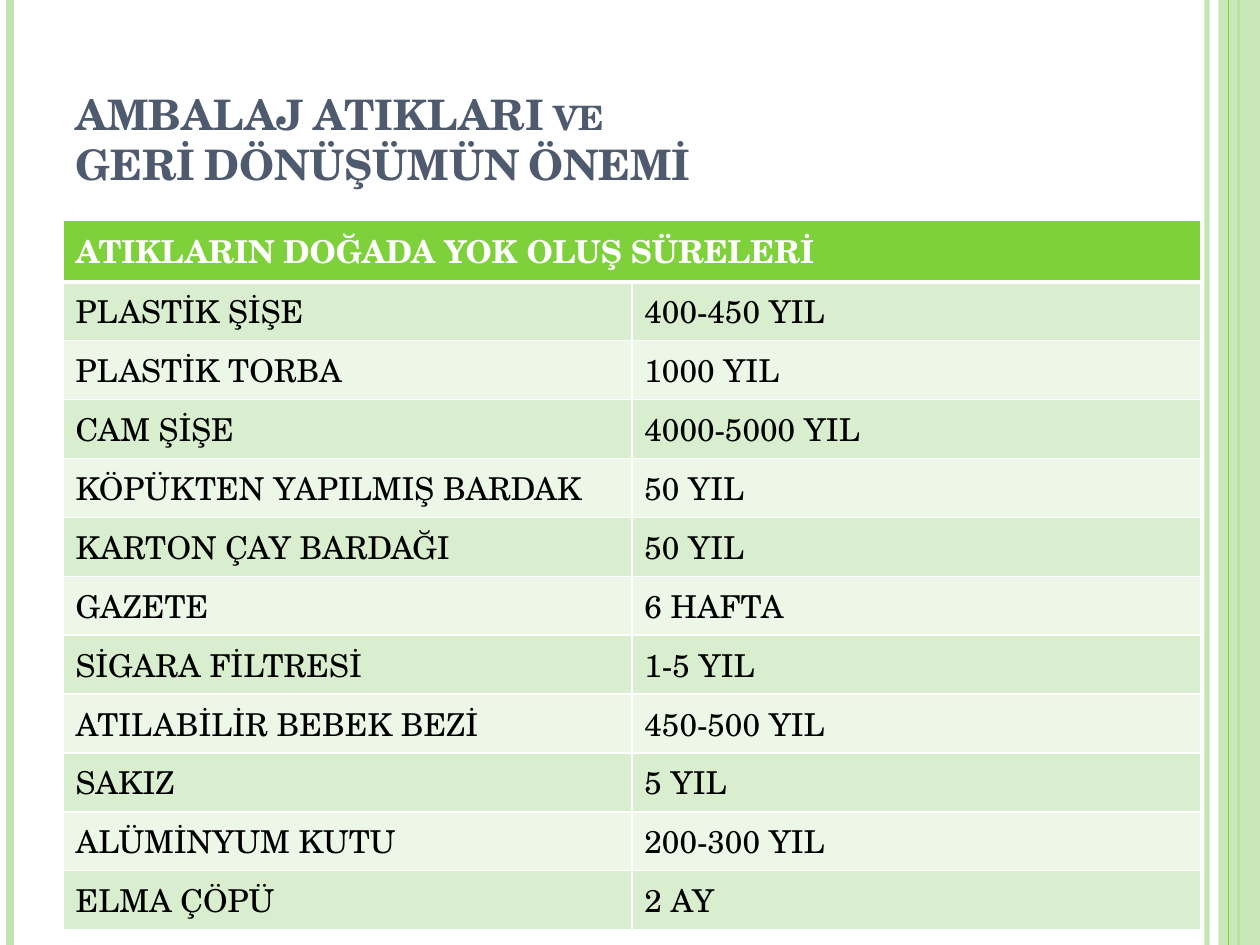
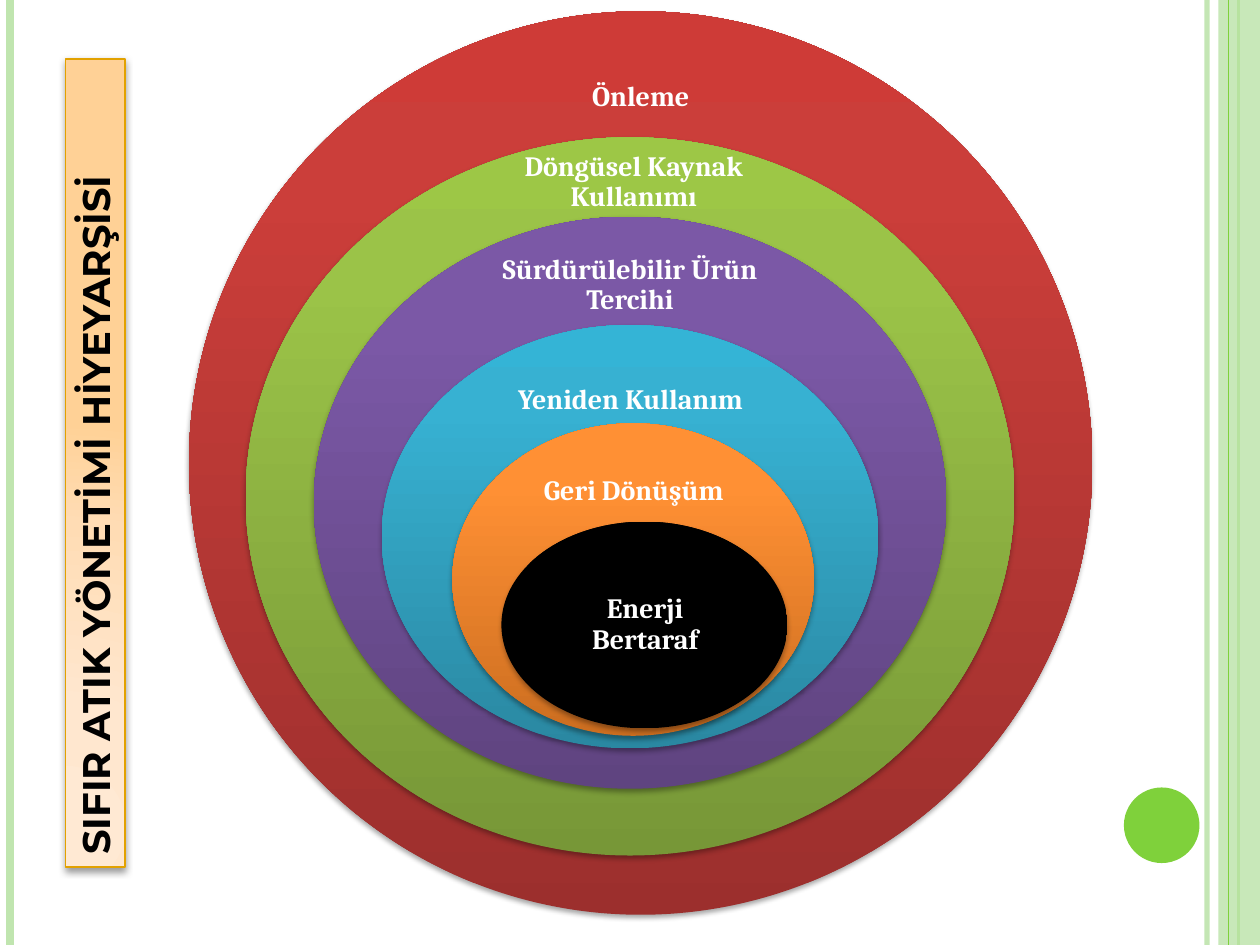
from lxml import etree
from pptx import Presentation
from pptx.dml.color import RGBColor
from pptx.enum.shapes import MSO_CONNECTOR, MSO_SHAPE
from pptx.enum.text import MSO_ANCHOR, MSO_AUTO_SIZE, PP_ALIGN
from pptx.oxml import parse_xml
from pptx.oxml.ns import nsdecls, qn
from pptx.util import Inches, Pt

COLUMNS, ROWS = 10, 7.5
UNIT = Inches(1)  # side of one square of the slide's grid
STRAIGHT = MSO_CONNECTOR.STRAIGHT
RECTANGLE, ELLIPSE = MSO_SHAPE.RECTANGLE, MSO_SHAPE.OVAL
TOP, MIDDLE, BOTTOM = MSO_ANCHOR.TOP, MSO_ANCHOR.MIDDLE, MSO_ANCHOR.BOTTOM
LEFT, CENTER = PP_ALIGN.LEFT, PP_ALIGN.CENTER

COLORS = {
    "green": "7FD13B",
    "pale green": "C0E5AF",
    "odd row": "D8EECE",
    "even row": "ECF7E8",
    "title": "4E5B6F",
    "banner line": "E2A100",
    "white": "FFFFFF",
    "black": "000000",
}
SERIF, LABEL_FONT, BANNER_FONT = "TeX Gyre Schola", "Cambria", "Montserrat"

# column, colour, width in points, opacity in percent
FRAME_LINES = [
    (9.58, "pale green", 3, 93),
    (0.08, "pale green", 4.5, 100),
    (9.83, "green", 1.5, 100),
]
INNER_FRAME_LINE = (9.75, "green", 0.75, 100)

TABLE_HEADING = "ATIKLARIN DOĞADA YOK OLUŞ SÜRELERİ"
DECAY_TIMES = [
    ("PLASTİK ŞİŞE", "400-450 YIL"),
    ("PLASTİK TORBA", "1000 YIL"),
    ("CAM ŞİŞE", "4000-5000 YIL"),
    ("KÖPÜKTEN YAPILMIŞ BARDAK", "50 YIL"),
    ("KARTON ÇAY BARDAĞI", "50 YIL"),
    ("GAZETE", "6 HAFTA"),
    ("SİGARA FİLTRESİ", "1-5 YIL"),
    ("ATILABİLİR BEBEK BEZİ", "450-500 YIL"),
    ("SAKIZ", "5 YIL"),
    ("ALÜMİNYUM KUTU", "200-300 YIL"),
    ("ELMA ÇÖPÜ", "2 AY"),
]

# label, ring box, label box, gradient from bottom to top
RING_STOPS = (0, 80, 100)
RINGS = [
    ("Önleme", (1.5, 0.09, 7.17, 7.17), (3.74, 0.31, 2.69, 0.93),
     ("9C2F2D", "CB3E3A", "CE3B37")),
    ("Döngüsel Kaynak Kullanımı", (1.95, 1.09, 6.1, 5.7), (3.75, 1.17, 2.56, 0.55),
     ("779737", "9BC348", "9DC746")),
    ("Sürdürülebilir Ürün Tercihi", (2.49, 1.72, 5.02, 4.54), (3.7, 1.95, 2.6, 0.63),
     ("5F4480", "7B58A6", "7C57A8")),
    ("Yeniden Kullanım", (3.03, 2.58, 3.94, 3.36), (3.94, 2.88, 2.13, 0.6),
     ("2A88A2", "37B1D2", "34B4D6")),
    ("Geri Dönüşüm", (3.59, 3.36, 2.87, 2.48), (4.1, 3.59, 1.86, 0.62),
     ("CC6E20", "FF9034", "FF9136")),
    ("Enerji Bertaraf", (3.98, 4.14, 2.27, 1.64), (4.32, 4.55, 1.6, 0.82),
     ("000000", "000000", "000000")),
]
UPWARD = '<a:lin ang="16200000" scaled="0"/>'

BANNER_STOPS = (0, 30, 75, 100)
BANNER_COLORS = ("FFE9D3", "FFE7CF", "FFDCB4", "FFD196")
BANNER_GLOW = ('<a:path path="circle"><a:fillToRect l="5000" t="100000"'
               ' r="120000" b="10000"/></a:path>')


def grid(*squares):
    """Turn grid squares into slide lengths."""
    return [round(count * UNIT) for count in squares]


def rgb(name):
    return RGBColor.from_string(COLORS[name])


def set_opacity(element, percent):
    for color in element.iter(qn("a:srgbClr")):
        etree.SubElement(color, qn("a:alpha")).set("val", str(percent * 1000))


def write(text_frame, text, font, size, color, bold=True, align=LEFT, anchor=TOP):
    text_frame.text = text
    text_frame.word_wrap = True
    text_frame.vertical_anchor = anchor
    paragraph = text_frame.paragraphs[0]
    paragraph.alignment = align
    for run in paragraph.runs:
        run.font.name = font
        run.font.size = Pt(size)
        run.font.bold = bold
        run.font.color.rgb = rgb(color)
    return paragraph


def add_plain_shape(slide, kind, box):
    """Add a preset shape with neither outline nor shadow."""
    shape = slide.shapes.add_shape(kind, *grid(*box))
    shape.line.fill.background()
    shape.shadow.inherit = False
    return shape


def fill_gradient(shape, positions, colors, direction):
    stops = "".join(
        f'<a:gs pos="{position * 1000}"><a:srgbClr val="{color}"/></a:gs>'
        for position, color in zip(positions, colors))
    gradient = parse_xml(f'<a:gradFill {nsdecls("a")} rotWithShape="1">'
                         f'<a:gsLst>{stops}</a:gsLst>{direction}</a:gradFill>')
    shape._element.spPr.find(qn("a:prstGeom")).addnext(gradient)


def cast_shadow(shape, opacity, blur, distance):
    """Add a soft shadow straight below the shape."""
    shadow = parse_xml(
        f'<a:outerShdw {nsdecls("a")} blurRad="{Pt(blur)}" dist="{Pt(distance)}"'
        ' dir="5400000" rotWithShape="0"><a:srgbClr val="000000"/></a:outerShdw>')
    set_opacity(shadow, opacity)
    shape._element.spPr.find(qn("a:effectLst")).append(shadow)


def add_frame_line(slide, column, color, width, opacity):
    line = slide.shapes.add_connector(STRAIGHT, *grid(column, 0, column, ROWS))
    line.line.color.rgb = rgb(color)
    line.line.width = Pt(width)
    properties = line._element.spPr
    if opacity < 100:
        set_opacity(properties, opacity)
    etree.SubElement(properties, qn("a:effectLst"))


def add_frame(slide):
    """Draw the stripes and the dot that every slide carries."""
    for frame_line in FRAME_LINES:
        add_frame_line(slide, *frame_line)
    band = add_plain_shape(slide, RECTANGLE, (9.67, 0, COLUMNS - 9.67, ROWS))
    band.fill.solid()
    band.fill.fore_color.rgb = rgb("pale green")
    set_opacity(band._element.spPr, 87)
    add_frame_line(slide, *INNER_FRAME_LINE)
    dot = add_plain_shape(slide, ELLIPSE, (8.92, 6.25, 0.6, 0.6))
    dot.fill.solid()
    dot.fill.fore_color.rgb = rgb("green")


def set_title(slide, text):
    title = slide.shapes.title
    title.left, title.top, title.width, title.height = grid(0.5, 0.3, 8.17, 1.25)
    paragraph = write(title.text_frame, text, SERIF, 24, "title", anchor=BOTTOM)
    for run in paragraph.runs:
        run._r.get_or_add_rPr().set("cap", "small")


def style_cell(cell, text, fill, color, bold, top=1, bottom=1):
    write(cell.text_frame, text, SERIF, 18, color, bold)
    properties = cell._tc.get_or_add_tcPr()
    for side, width in (("L", 1), ("R", 1), ("T", top), ("B", bottom)):
        properties.append(parse_xml(
            f'<a:ln{side} {nsdecls("a")} w="{Pt(width)}"><a:solidFill>'
            f'<a:srgbClr val="{COLORS["white"]}"/></a:solidFill></a:ln{side}>'))
    cell.fill.solid()
    cell.fill.fore_color.rgb = rgb(fill)


def add_decay_table(slide):
    row_count = len(DECAY_TIMES) + 1
    box = grid(0.5, 1.75, 9.03, 0.44 * row_count)
    table = slide.shapes.add_table(row_count, 2, *box).table
    table.horz_banding = False
    for cell, text in zip(table.rows[0].cells, (TABLE_HEADING, "")):
        style_cell(cell, text, "green", "white", True, bottom=3)
    table.cell(0, 0).merge(table.cell(0, 1))
    for number, texts in enumerate(DECAY_TIMES, start=1):
        fill = "odd row" if number % 2 else "even row"
        for cell, text in zip(table.rows[number].cells, texts):
            style_cell(cell, text, fill, "black", False, top=3 if number == 1 else 1)


def add_ring(slide, label, ring_box, label_box, colors):
    ring = add_plain_shape(slide, ELLIPSE, ring_box)
    fill_gradient(ring, RING_STOPS, colors, UPWARD)
    cast_shadow(ring, 35, 3.1, 1.8)
    text_frame = slide.shapes.add_textbox(*grid(*label_box)).text_frame
    text_frame.margin_left = text_frame.margin_right = Inches(0.12)
    text_frame.margin_top = text_frame.margin_bottom = Inches(0.12)
    paragraph = write(text_frame, label, LABEL_FONT, 16, "white",
                      align=CENTER, anchor=MIDDLE)
    paragraph.line_spacing = 0.9


def add_banner(slide, text):
    """Add the heading that reads upwards along the left edge."""
    banner = add_plain_shape(slide, RECTANGLE, (-2.45, 3.44, 6.41, 0.47))
    banner.rotation = 270
    fill_gradient(banner, BANNER_STOPS, BANNER_COLORS, BANNER_GLOW)
    banner.line.color.rgb = rgb("banner line")
    banner.line.width = Pt(1)
    cast_shadow(banner, 40, 4, 2)
    write(banner.text_frame, text, BANNER_FONT, 22, "black")
    banner.text_frame.auto_size = MSO_AUTO_SIZE.SHAPE_TO_FIT_TEXT


def main():
    presentation = Presentation()
    presentation.slide_width, presentation.slide_height = grid(COLUMNS, ROWS)
    title_only, blank = presentation.slide_layouts[5], presentation.slide_layouts[6]

    decay_slide = presentation.slides.add_slide(title_only)
    add_frame(decay_slide)
    set_title(decay_slide, "AMBALAJ ATIKLARI ve \vGERİ DÖNÜŞÜMÜN ÖNEMİ")
    add_decay_table(decay_slide)

    hierarchy_slide = presentation.slides.add_slide(blank)
    add_frame(hierarchy_slide)
    for ring in RINGS:
        add_ring(hierarchy_slide, *ring)
    add_banner(hierarchy_slide, "SIFIR ATIK YÖNETİMİ HİYEYARŞİSİ")

    presentation.save("out.pptx")


if __name__ == "__main__":
    main()
